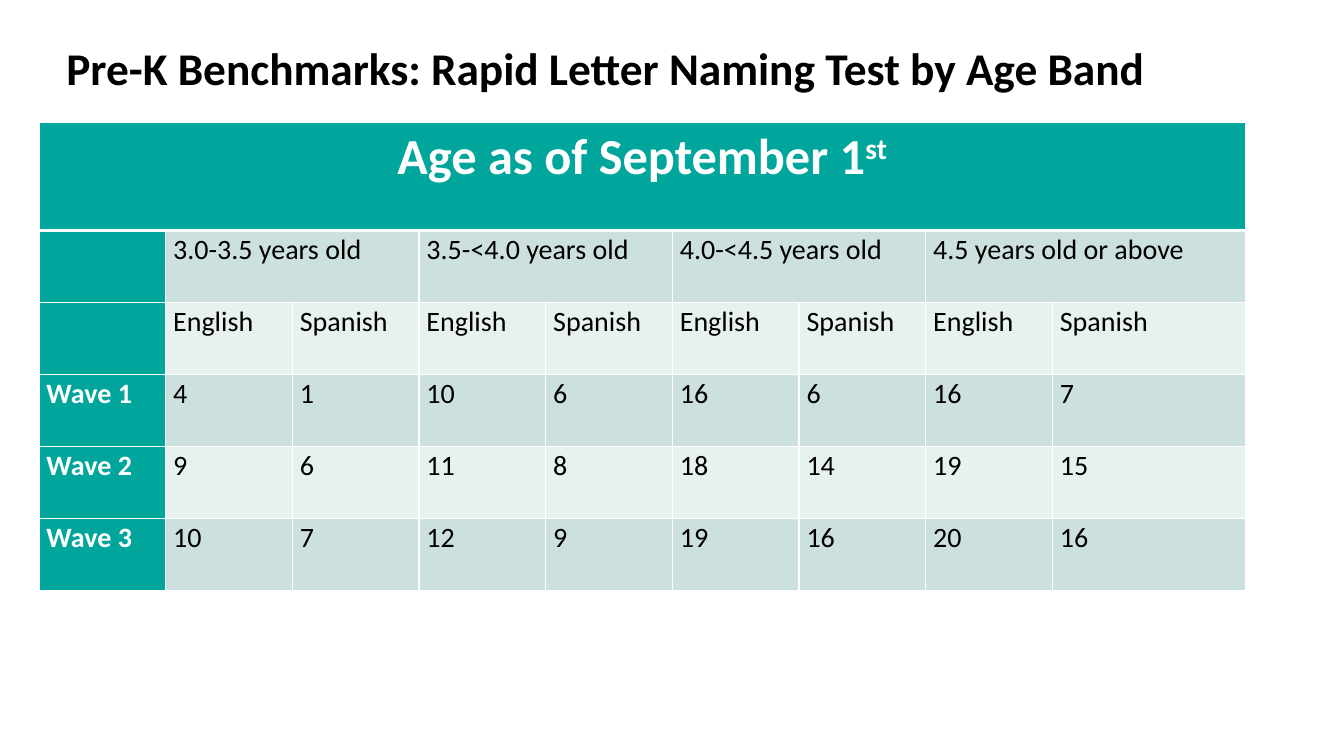
from dataclasses import dataclass

from lxml.etree import SubElement
from pptx import Presentation
from pptx.dml.color import RGBColor
from pptx.enum.text import MSO_ANCHOR, PP_ALIGN
from pptx.oxml.ns import qn
from pptx.slide import Slide
from pptx.table import Table, _Cell
from pptx.text.text import _Paragraph
from pptx.util import Pt


@dataclass(frozen=True)
class Theme:
    font: str = "Calibri"
    ink: str = "000000"
    white: str = "FFFFFF"
    teal: str = "00A69B"
    bands: tuple[str, str] = ("CCE1DE", "E7F1EF")
    title_size: float = 32.4
    heading_size: float = 36
    body_size: float = 20
    line_spacing: float = 1.07
    rule: float = 1
    heading_rule: float = 3


@dataclass(frozen=True)
class Wave:
    name: str
    scores: tuple[int, ...]


THEME = Theme()
AGE_BANDS = ("3.0-3.5 years old", "3.5-<4.0 years old",
             "4.0-<4.5 years old", "4.5 years old or above")
LANGUAGES = ("English", "Spanish")
WAVES = (
    Wave("Wave 1", (4, 1, 10, 6, 16, 6, 16, 7)),
    Wave("Wave 2", (9, 6, 11, 8, 18, 14, 19, 15)),
    Wave("Wave 3", (10, 7, 12, 9, 19, 16, 20, 16)),
)
COLUMN_WIDTHS = [90.5] * 8 + [138]
ROW_HEIGHTS = [77] + [51.4] * 5


def add_run(paragraph: _Paragraph, text: str, size: float, color: str,
            bold: bool, superscript: bool = False) -> None:
    run = paragraph.add_run()
    run.text = text
    run.font.name = THEME.font
    run.font.size = Pt(size)
    run.font.bold = bold
    run.font.color.rgb = RGBColor.from_string(color)
    if superscript:
        run.font._element.set("baseline", "30000")


def add_title(slide: Slide) -> None:
    title = slide.shapes.add_textbox(Pt(40.3), Pt(21.6), Pt(879), Pt(49.7))
    frame = title.text_frame
    frame.word_wrap = True
    frame.vertical_anchor = MSO_ANCHOR.BOTTOM
    add_run(frame.paragraphs[0],
            "Pre-K Benchmarks: Rapid Letter Naming Test by Age Band",
            THEME.title_size, THEME.ink, True)


def style_cell(cell: _Cell, row: int, column: int) -> None:
    """Set the borders, fill, insets and line spacing for a grid position."""
    heavy_side = {0: "B", 1: "T"}.get(row)
    properties = cell._tc.get_or_add_tcPr()
    for side in "LRTB":
        width = THEME.heading_rule if side == heavy_side else THEME.rule
        line = SubElement(properties, qn(f"a:ln{side}"), w=str(Pt(width)))
        fill = SubElement(line, qn("a:solidFill"))
        SubElement(fill, qn("a:srgbClr"), val=THEME.white)
    is_heading = row == 0 or column == 0
    cell.fill.solid()
    cell.fill.fore_color.rgb = RGBColor.from_string(
        THEME.teal if is_heading else THEME.bands[(row - 1) % 2])
    cell.margin_left = cell.margin_right = Pt(5.4)
    cell.margin_top = cell.margin_bottom = Pt(0)
    cell.text_frame.paragraphs[0].line_spacing = THEME.line_spacing


def write_cell(table: Table, row: int, column: int, text: str) -> None:
    is_heading = column == 0
    add_run(table.cell(row, column).text_frame.paragraphs[0], text,
            THEME.body_size, THEME.white if is_heading else THEME.ink, is_heading)


def add_benchmarks(slide: Slide) -> None:
    table = slide.shapes.add_table(
        len(ROW_HEIGHTS), len(COLUMN_WIDTHS), Pt(27.8), Pt(87.6),
        Pt(sum(COLUMN_WIDTHS)), Pt(sum(ROW_HEIGHTS))).table
    table.first_row = table.horz_banding = False
    for column, width in zip(table.columns, COLUMN_WIDTHS):
        column.width = Pt(width)
    for row, height in zip(table.rows, ROW_HEIGHTS):
        row.height = Pt(height)
    for r in range(len(ROW_HEIGHTS)):
        for c in range(len(COLUMN_WIDTHS)):
            style_cell(table.cell(r, c), r, c)

    table.cell(0, 0).merge(table.cell(0, len(COLUMN_WIDTHS) - 1))
    heading = table.cell(0, 0).text_frame.paragraphs[0]
    heading.alignment = PP_ALIGN.CENTER
    add_run(heading, "Age as of September 1", THEME.heading_size, THEME.white, True)
    add_run(heading, "st", THEME.heading_size, THEME.white, True, superscript=True)

    for i, age_band in enumerate(AGE_BANDS):
        first = 1 + i * len(LANGUAGES)
        table.cell(1, first).merge(table.cell(1, first + len(LANGUAGES) - 1))
        write_cell(table, 1, first, age_band)
        for c, language in enumerate(LANGUAGES, first):
            write_cell(table, 2, c, language)
    for r, wave in enumerate(WAVES, 3):
        for c, value in enumerate((wave.name, *wave.scores)):
            write_cell(table, r, c, str(value))


def main() -> None:
    presentation = Presentation()
    presentation.slide_width, presentation.slide_height = Pt(960), Pt(540)
    slide = presentation.slides.add_slide(presentation.slide_layouts[6])
    add_title(slide)
    add_benchmarks(slide)
    presentation.save("out.pptx")


if __name__ == "__main__":
    main()
